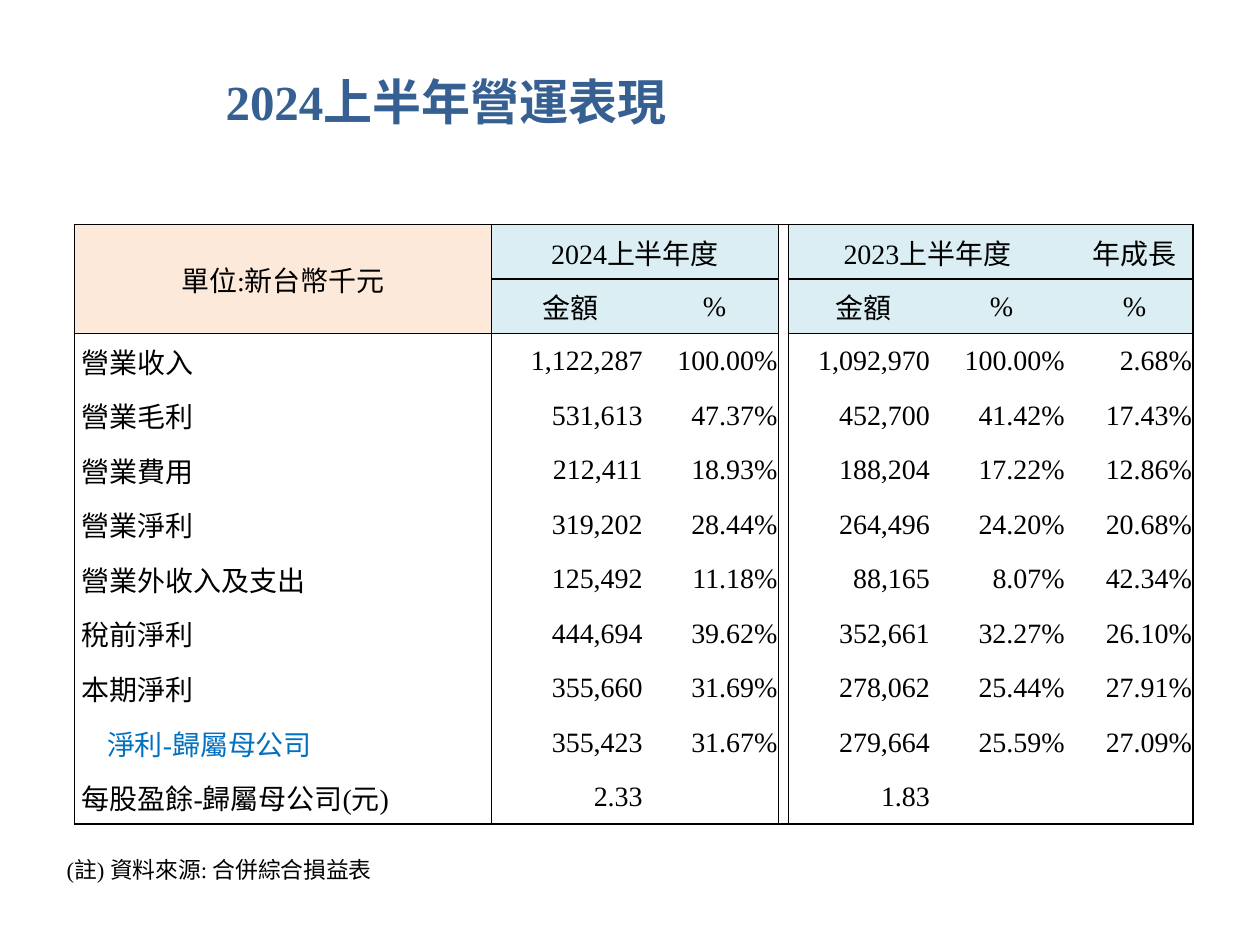
"""Build the half-year operating results slide with its income table."""
import dataclasses
import typing

import lxml.etree
import pptx
import pptx.dml.color
import pptx.enum.text
import pptx.oxml.ns
import pptx.util

Inches = pptx.util.Inches
ALIGN = pptx.enum.text.PP_ALIGN
ANCHOR = pptx.enum.text.MSO_ANCHOR
COLORS = {"title": "376092", "text": "000000", "accent": "0070C0",
          "unit": "FDE9D9", "header": "DBEEF3", "line": "000000"}
FONT = "Times New Roman"
COL_WIDTHS = [3.31, 1.26, 1.02, 0.08, 1.18, 1.02, 0.08, 0.93]
ROW_HEIGHT = 4.76 / 11
HEADER_ROWS, GAP_COL = 2, 3
AMOUNT_COLS = (1, 4)
VERTICAL_RULES = {0, 1, 3, 4, 8}


@dataclasses.dataclass
class Item:
    """One income statement line."""
    label: str
    values: tuple[str, ...]
    color: str = "text"
    indent: float = 0.06


@dataclasses.dataclass
class Header:
    """One header cell, with the number of rows and columns it spans."""
    row: int
    col: int
    text: str
    rows: int = 1
    cols: int = 1


HEADERS = [
    Header(0, 0, "單位:新台幣千元", rows=2),
    Header(0, 1, "2024上半年度", cols=2),
    Header(0, 4, "2023上半年度", cols=2),
    Header(0, 7, "年成長"),
    Header(1, 1, "金額"), Header(1, 2, "%"),
    Header(1, 4, "金額"), Header(1, 5, "%"), Header(1, 7, "%"),
]
ITEMS = [
    Item("營業收入", ("1,122,287", "100.00%", "1,092,970", "100.00%", "2.68%")),
    Item("營業毛利", ("531,613", "47.37%", "452,700", "41.42%", "17.43%")),
    Item("營業費用", ("212,411", "18.93%", "188,204", "17.22%", "12.86%")),
    Item("營業淨利", ("319,202", "28.44%", "264,496", "24.20%", "20.68%")),
    Item("營業外收入及支出", ("125,492", "11.18%", "88,165", "8.07%", "42.34%")),
    Item("稅前淨利", ("444,694", "39.62%", "352,661", "32.27%", "26.10%")),
    Item("本期淨利", ("355,660", "31.69%", "278,062", "25.44%", "27.91%")),
    Item("淨利-歸屬母公司", ("355,423", "31.67%", "279,664", "25.59%", "27.09%"),
         "accent", 0.26),
    Item("每股盈餘-歸屬母公司(元)", ("2.33", "", "1.83", "", "")),
]
VALUE_COLS = (1, 2, 4, 5, 7)
ROW_COUNT = HEADER_ROWS + len(ITEMS)


def rgb(name: str) -> pptx.dml.color.RGBColor:
    """Return the named colour."""
    return pptx.dml.color.RGBColor.from_string(COLORS[name])


def set_attrs(obj: typing.Any, values: dict[str, typing.Any]) -> None:
    """Set each attribute in the dict on the object."""
    for name, value in values.items():
        setattr(obj, name, value)


def write(tf: typing.Any, text: str, size: float, color: str = "text",
          align: typing.Any = ALIGN.LEFT, bold: bool = False) -> None:
    """Write one formatted paragraph into a text frame."""
    p = tf.paragraphs[0]
    p.alignment = align
    p.font.size = pptx.util.Pt(size)
    if text:
        r = p.add_run()
        r.text = text
        set_attrs(r.font, {"name": FONT, "size": pptx.util.Pt(size), "bold": bold})
        r.font.color.rgb = rgb(color)


def has_rule(edge: int, col: int) -> bool:
    """Tell whether a horizontal rule runs along a row edge in a column."""
    if edge in (0, ROW_COUNT):
        return True
    if col == GAP_COL:
        return False
    return edge == HEADER_ROWS or (edge == 1 and col > 0)


def set_borders(cell: typing.Any, row: int, col: int) -> None:
    """Draw or clear the four borders of a cell."""
    edges = {"L": col in VERTICAL_RULES, "R": col + 1 in VERTICAL_RULES,
             "T": has_rule(row, col), "B": has_rule(row + 1, col)}
    qn = pptx.oxml.ns.qn
    tc_pr = cell._tc.get_or_add_tcPr()
    for side, visible in edges.items():
        ln = lxml.etree.SubElement(tc_pr, qn(f"a:ln{side}"), w=str(pptx.util.Pt(1)))
        if visible:
            fill = lxml.etree.SubElement(ln, qn("a:solidFill"))
            lxml.etree.SubElement(fill, qn("a:srgbClr"), val=COLORS["line"])
        else:
            lxml.etree.SubElement(ln, qn("a:noFill"))


def format_cell(cell: typing.Any, row: int, col: int) -> None:
    """Set the margins, borders and fill of a cell."""
    set_attrs(cell, {"margin_left": Inches(0.01), "margin_right": Inches(0.01),
                     "margin_top": Inches(0.01), "margin_bottom": 0,
                     "vertical_anchor": ANCHOR.MIDDLE})
    set_borders(cell, row, col)
    if row < HEADER_ROWS and col != GAP_COL:
        cell.fill.solid()
        cell.fill.fore_color.rgb = rgb("header" if col else "unit")
    else:
        cell.fill.background()


def add_income_table(s: typing.Any) -> None:
    """Add the income table."""
    tbl = s.shapes.add_table(ROW_COUNT, len(COL_WIDTHS), Inches(0.59), Inches(1.78),
                             Inches(sum(COL_WIDTHS)), Inches(4.76)).table
    set_attrs(tbl, {"first_row": False, "horz_banding": False})
    for column, width in zip(tbl.columns, COL_WIDTHS):
        column.width = Inches(width)
    texts = {(h.row, h.col): (h.text, "text", ALIGN.CENTER) for h in HEADERS}
    for row, item in enumerate(ITEMS, HEADER_ROWS):
        texts[row, 0] = (item.label, item.color, ALIGN.LEFT)
        for col, value in zip(VALUE_COLS, item.values):
            texts[row, col] = (value, "text", ALIGN.RIGHT)
    for row in range(ROW_COUNT):
        tbl.rows[row].height = Inches(ROW_HEIGHT)
        for col in range(len(COL_WIDTHS)):
            cell = tbl.cell(row, col)
            format_cell(cell, row, col)
            text, color, align = texts.get((row, col), ("", "text", ALIGN.LEFT))
            write(cell.text_frame, text, 16, color, align)
    for row, item in enumerate(ITEMS, HEADER_ROWS):
        tbl.cell(row, 0).margin_left = Inches(item.indent)
        for col in AMOUNT_COLS:
            tbl.cell(row, col).margin_right = Inches(0.06)
    for h in HEADERS:
        if h.rows * h.cols > 1:
            tbl.cell(h.row, h.col).merge(
                tbl.cell(h.row + h.rows - 1, h.col + h.cols - 1))


def main() -> None:
    """Build and save the slide."""
    prs = pptx.Presentation()
    set_attrs(prs, {"slide_width": Inches(10), "slide_height": Inches(7.5)})
    s = prs.slides.add_slide(prs.slide_layouts[5])
    frame = {"word_wrap": True, "auto_size": pptx.enum.text.MSO_AUTO_SIZE.NONE,
             "vertical_anchor": ANCHOR.TOP}
    title = s.shapes.title
    set_attrs(title, {"left": Inches(1.69), "top": Inches(0.52),
                      "width": Inches(3.74), "height": Inches(0.57)})
    set_attrs(title.text_frame, frame)
    write(title.text_frame, "2024上半年營運表現", 28, "title", bold=True)
    add_income_table(s)
    note = s.shapes.add_textbox(Inches(0.43), Inches(6.74), Inches(2.65), Inches(0.32))
    set_attrs(note.text_frame, frame)
    write(note.text_frame, "(註) 資料來源: 合併綜合損益表", 13)
    prs.save("out.pptx")


if __name__ == "__main__":
    main()
